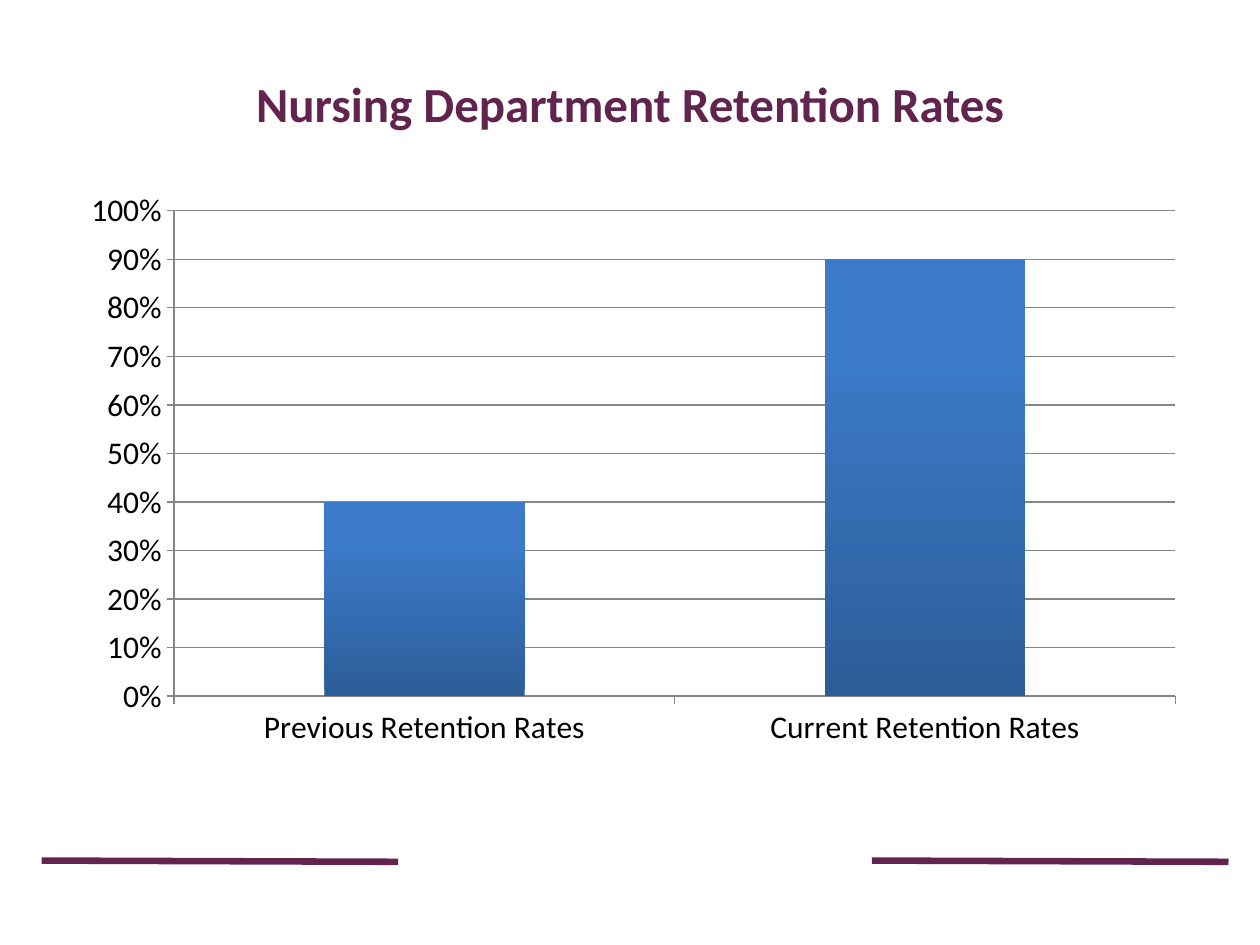
from dataclasses import dataclass

from lxml import etree
from pptx import Presentation
from pptx.chart.data import CategoryChartData
from pptx.dml.color import RGBColor
from pptx.enum.chart import XL_CHART_TYPE, XL_TICK_MARK
from pptx.enum.shapes import MSO_CONNECTOR
from pptx.enum.text import MSO_ANCHOR, PP_ALIGN
from pptx.oxml import parse_xml
from pptx.oxml.ns import nsdecls, qn
from pptx.util import Inches, Pt

COLUMNS = XL_CHART_TYPE.COLUMN_CLUSTERED
OUTSIDE = XL_TICK_MARK.OUTSIDE
STRAIGHT = MSO_CONNECTOR.STRAIGHT
MIDDLE = MSO_ANCHOR.MIDDLE
CENTER = PP_ALIGN.CENTER


@dataclass(frozen=True)
class Theme:
    font: str = "Calibri"
    plum: RGBColor = RGBColor(0x60, 0x24, 0x4E)
    text: RGBColor = RGBColor(0, 0, 0)
    grid: RGBColor = RGBColor(0x86, 0x86, 0x86)
    bar_bottom: RGBColor = RGBColor(0x2C, 0x5D, 0x98)
    bar_top: RGBColor = RGBColor(0x3C, 0x7B, 0xC9)
    title_size: Pt = Pt(28)
    chart_size: Pt = Pt(18)
    rule_width: Pt = Pt(3.75)
    grid_width: Pt = Pt(0.75)


class SlideBuilder:
    def __init__(self, slide, theme):
        self.slide = slide
        self.theme = theme

    def style_font(self, font, size, color, bold=False):
        font.name = self.theme.font
        font.size = size
        font.bold = bold
        font.color.rgb = color

    def style_line(self, line, color, width):
        line.color.rgb = color
        line.width = width

    def title(self, text, left, top, width, height):
        box = self.slide.shapes.title
        box.left, box.top = Inches(left), Inches(top)
        box.width, box.height = Inches(width), Inches(height)
        box.text_frame.vertical_anchor = MIDDLE
        para = box.text_frame.paragraphs[0]
        para.text = text
        para.alignment = CENTER
        self.style_font(para.font, self.theme.title_size, self.theme.plum, True)

    def rule(self, left, top, width, drop):
        rule = self.slide.shapes.add_connector(
            STRAIGHT, Inches(left), Inches(top),
            Inches(left + width), Inches(top + drop))
        self.style_line(rule.line, self.theme.plum, self.theme.rule_width)
        etree.SubElement(rule._element.spPr, qn("a:effectLst"))

    def column_chart(self, categories, name, values, left, top, width, height):
        data = CategoryChartData(number_format="0%")
        data.categories = categories
        data.add_series(name, values)
        chart = self.slide.shapes.add_chart(
            COLUMNS, Inches(left), Inches(top),
            Inches(width), Inches(height), data).chart
        chart.has_title = False
        chart.has_legend = False
        self.style_font(chart.font, self.theme.chart_size, self.theme.text)
        plot = chart.plots[0]
        plot.gap_width = 150
        plot.vary_by_categories = False
        self.gradient(plot.series[0].format.fill)
        for axis in (chart.category_axis, chart.value_axis):
            axis.major_tick_mark = OUTSIDE
            self.style_line(axis.format.line, self.theme.grid, self.theme.grid_width)
        scale = chart.value_axis
        scale.minimum_scale, scale.maximum_scale = 0, 1
        scale.major_unit = 0.1
        scale.tick_labels.number_format = "0%"
        scale.tick_labels.number_format_is_linked = False
        scale.has_major_gridlines = True
        self.style_line(scale.major_gridlines.format.line,
                        self.theme.grid, self.theme.grid_width)
        return chart

    def gradient(self, fill):
        fill.gradient()
        fill.gradient_angle = 90
        bottom, top = fill.gradient_stops
        bottom.position, top.position = 0, 0.8
        bottom.color.rgb = self.theme.bar_bottom
        top.color.rgb = self.theme.bar_top

    def plot_layout(self, chart, x, y, w, h):
        area = chart._chartSpace.chart.plotArea
        for old in area.findall(qn("c:layout")):
            area.remove(old)
        modes = "".join(f'<c:{side}Mode val="edge"/>' for side in "xy")
        sizes = "".join(f'<c:{key} val="{value}"/>'
                        for key, value in zip("xywh", (x, y, w, h)))
        area.insert(0, parse_xml(
            f'<c:layout {nsdecls("c")}><c:manualLayout>'
            f'<c:layoutTarget val="inner"/>{modes}{sizes}'
            '</c:manualLayout></c:layout>'))


def main():
    deck = Presentation()
    deck.slide_width, deck.slide_height = Inches(10), Inches(7.5)
    page = SlideBuilder(deck.slides.add_slide(deck.slide_layouts[5]), Theme())
    for left in (0.33, 6.92):
        page.rule(left, 6.83, 2.83, 0.01)
    page.title("Nursing Department Retention Rates", 0.5, 0.3, 9, 1.03)
    chart = page.column_chart(
        ["Previous Retention Rates", "Current Retention Rates"],
        "Series 1", (0.4, 0.9), 0.5, 1.25, 9, 4.92)
    page.plot_layout(chart, 0.098, 0.086, 0.883, 0.783)
    deck.save("out.pptx")


if __name__ == "__main__":
    main()
